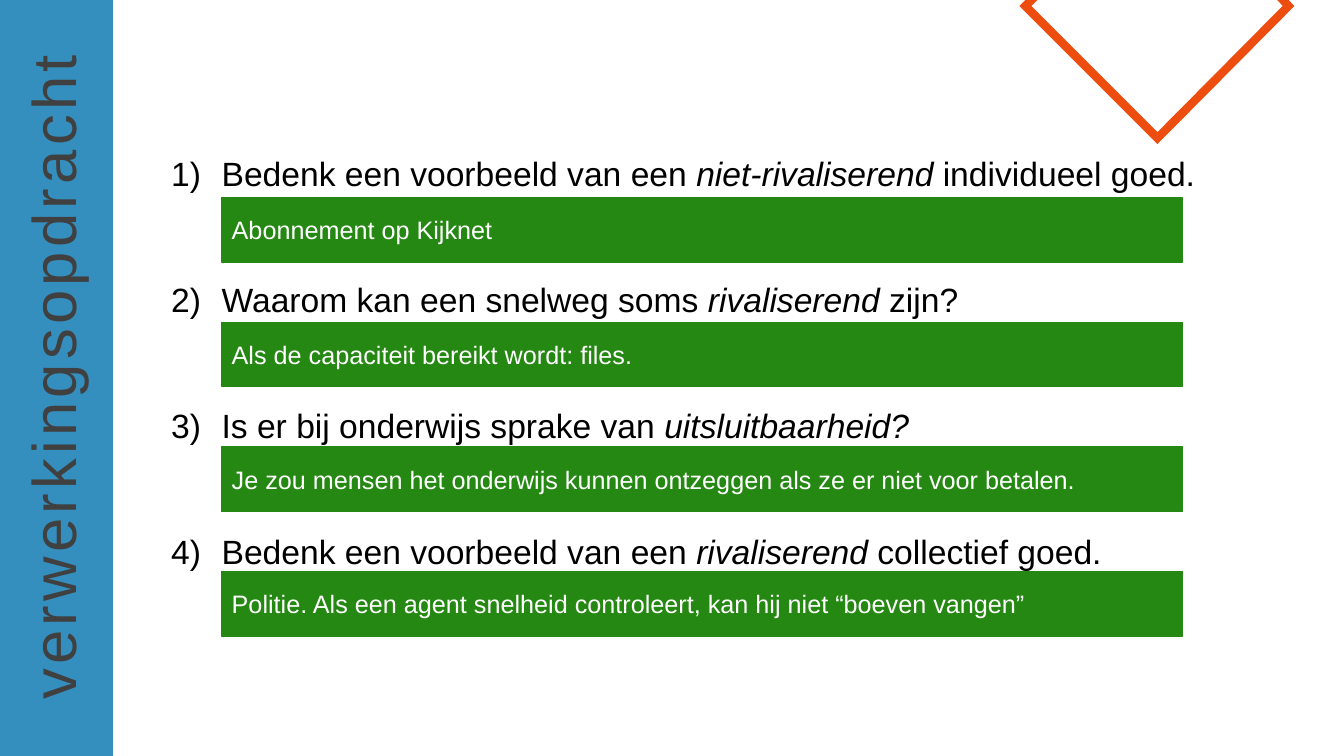
from lxml import etree
from pptx import Presentation
from pptx.dml.color import RGBColor
from pptx.enum.shapes import MSO_SHAPE
from pptx.enum.text import MSO_ANCHOR, PP_ALIGN
from pptx.oxml.ns import qn
from pptx.util import Inches, Pt

TITLE = "verwerkingsopdracht"
# Each question is split into plain, italic and plain text.
TASKS = [
    (("Bedenk een voorbeeld van een ", "niet-rivaliserend", " individueel goed."),
     "Abonnement op Kijknet"),
    (("Waarom kan een snelweg soms ", "rivaliserend", " zijn?"),
     "Als de capaciteit bereikt wordt: files."),
    (("Is er bij onderwijs sprake van ", "uitsluitbaarheid?"),
     "Je zou mensen het onderwijs kunnen ontzeggen als ze er niet voor betalen."),
    (("Bedenk een voorbeeld van een ", "rivaliserend", " collectief goed."),
     "Politie. Als een agent snelheid controleert, kan hij niet “boeven vangen”"),
]
CORNER = [(10.3, -0.07), (10.17, 0.06), (11.48, 1.37), (12.78, 0.06), (12.66, -0.07)]

BLUE = RGBColor(0x1A, 0x80, 0xB6)
GREEN = RGBColor(0x25, 0x88, 0x12)
ORANGE = RGBColor(0xED, 0x4D, 0x0F)
GREY = RGBColor(0x40, 0x40, 0x40)
BLACK = RGBColor(0, 0, 0)
WHITE = RGBColor(255, 255, 255)
FONT = "Arial"
FIRST, STEP = 1.96, 1.237
GAP = Pt(64.2)

deck = Presentation()
deck.slide_width, deck.slide_height = Inches(13.33), Inches(7.5)
slide = deck.slides.add_slide(deck.slide_layouts[6])
shapes = slide.shapes


def add_run(para, text, size, color, italic=False):
    run = para.add_run()
    run.text = text
    font = run.font
    font.name, font.size, font.italic = FONT, Pt(size), italic
    font.color.rgb = color
    return run


def add_bar(left, top, width, height, color):
    bar = shapes.add_shape(MSO_SHAPE.RECTANGLE, Inches(left), Inches(top),
                           Inches(width), Inches(height))
    bar.shadow.inherit = False
    bar.fill.solid()
    bar.fill.fore_color.rgb = color
    return bar


def add_number(para):
    """Give the paragraph a hanging automatic number."""
    props = para._p.get_or_add_pPr()
    props.set("marL", str(Inches(0.5)))
    props.set("indent", str(Inches(-0.5)))
    etree.SubElement(props, qn("a:buFont"), typeface="+mj-lt")
    etree.SubElement(props, qn("a:buAutoNum"), type="arabicParenR")


# Corner outline
start, *rest = [(Inches(x), Inches(y)) for x, y in CORNER]
path = shapes.build_freeform(*start)
path.add_line_segments(rest, close=False)
corner = path.convert_to_shape()
corner.shadow.inherit = False
corner.fill.background()
corner.line.color.rgb = ORANGE
corner.line.width = Pt(6)
etree.SubElement(corner.line._get_or_add_ln(), qn("a:miter"), lim="800000")

# Side band with its upright title
band = add_bar(0, -0.01, 1.12, 7.51, BLUE)
band.line.fill.background()
tint = band.fill._xPr.find(qn("a:solidFill"))[0]
etree.SubElement(tint, qn("a:alpha"), val="88000")

title = shapes.add_textbox(Inches(-2.83), Inches(3.27), Inches(6.7), Inches(0.84))
title.rotation = 270
title.text_frame.word_wrap = False
label = add_run(title.text_frame.paragraphs[0], TITLE, 44, GREY)
label.font._element.set("spc", "300")

# Questions in one list, answers in the gaps
body = shapes.add_textbox(Inches(1.6), Inches(1.51), Inches(11.4), Inches(5.71))
frame = body.text_frame
frame.word_wrap = True
for i, (parts, answer) in enumerate(TASKS):
    para = frame.add_paragraph() if i else frame.paragraphs[0]
    para.line_spacing = 0.9
    para.space_before = GAP if i else Pt(0)
    add_number(para)
    for j, part in enumerate(parts):
        add_run(para, part, 24, BLACK, italic=j == 1)

    bar = add_bar(2.2, FIRST + i * STEP, 9.53, 0.64, GREEN)
    bar.line.color.rgb = GREEN
    bar.line.width = Pt(1)
    bar.text_frame.word_wrap = True
    bar.text_frame.vertical_anchor = MSO_ANCHOR.MIDDLE
    line = bar.text_frame.paragraphs[0]
    line.alignment = PP_ALIGN.LEFT
    add_run(line, answer, 18, WHITE)

deck.save("out.pptx")
